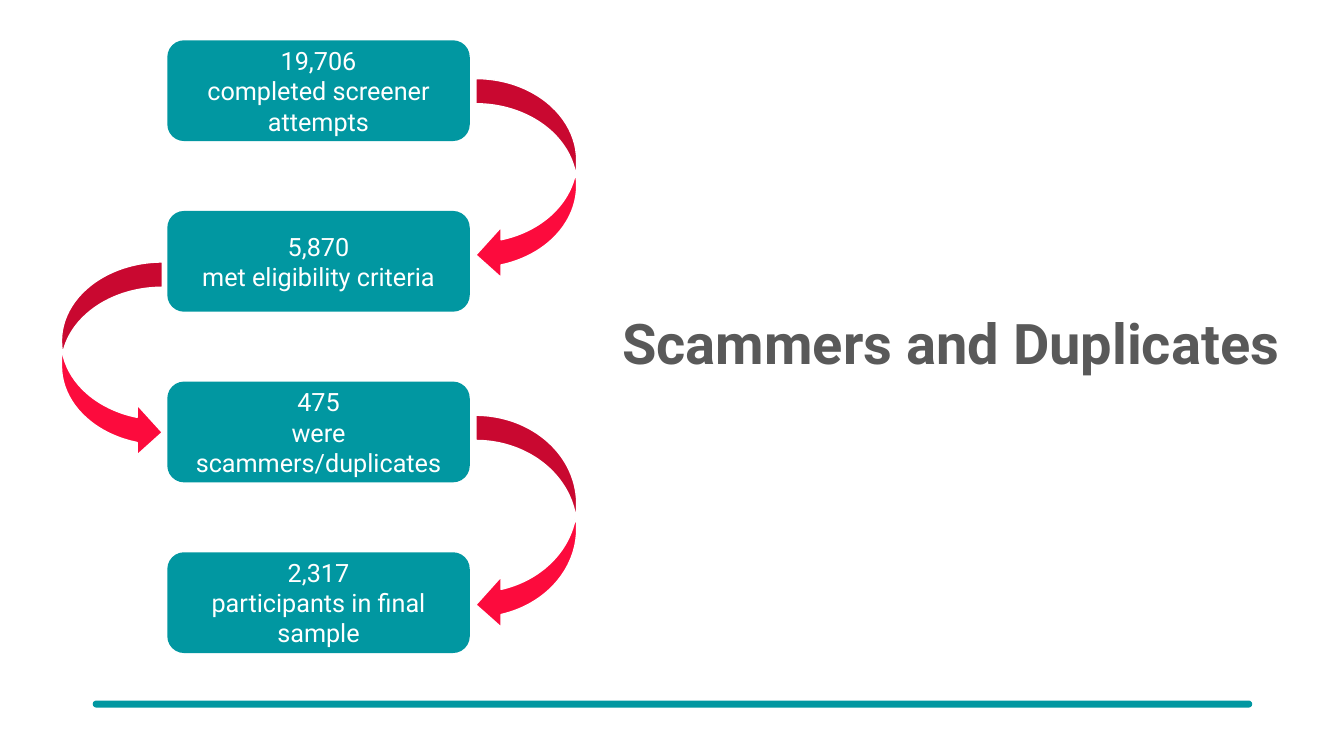
from dataclasses import dataclass

from pptx import Presentation
from pptx.dml.color import RGBColor
from pptx.enum.shapes import MSO_SHAPE
from pptx.enum.text import MSO_ANCHOR, PP_ALIGN
from pptx.util import Inches, Pt

ROUNDED = MSO_SHAPE.ROUNDED_RECTANGLE
ARROW_ON_RIGHT = MSO_SHAPE.CURVED_LEFT_ARROW
ARROW_ON_LEFT = MSO_SHAPE.CURVED_RIGHT_ARROW
MIDDLE = MSO_ANCHOR.MIDDLE
CENTER = PP_ALIGN.CENTER


@dataclass(frozen=True)
class Theme:
    font: str = "Roboto"
    teal: RGBColor = RGBColor(0x01, 0x97, 0xA1)
    red: RGBColor = RGBColor(0xFC, 0x0B, 0x3D)
    grey: RGBColor = RGBColor(0x59, 0x59, 0x59)
    white: RGBColor = RGBColor(0xFF, 0xFF, 0xFF)
    title_size: Pt = Pt(40)
    step_size: Pt = Pt(18)


THEME = Theme()

STEPS = [
    ("19,706", "completed screener attempts"),
    ("5,870", "met eligibility criteria"),
    ("475", "were scammers/duplicates"),
    ("2,317", "participants in final sample"),
]
STEP_TOP, STEP_PITCH = 0.4, 1.693

# Preset, left, top, height
ARROWS = [
    (ARROW_ON_RIGHT, 4.72, 0.78, 2),
    (ARROW_ON_LEFT, 0.61, 2.6, 1.94),
    (ARROW_ON_RIGHT, 4.72, 4.12, 2.13),
]


def add_filled(page, preset, left, top, width, height, color):
    shape = page.shapes.add_shape(
        preset, Inches(left), Inches(top), Inches(width), Inches(height))
    shape.shadow.inherit = False
    shape.fill.solid()
    shape.fill.fore_color.rgb = color
    shape.line.fill.background()
    return shape


def write_lines(box, lines, size, color, bold=False, line_spacing=1.0):
    frame = box.text_frame
    frame.word_wrap = True
    frame.vertical_anchor = MIDDLE
    frame.text = "\n".join(lines)
    for para in frame.paragraphs:
        para.alignment = CENTER
        para.line_spacing = line_spacing
        para.font.name = THEME.font
        para.font.size = size
        para.font.bold = bold
        para.font.color.rgb = color


def add_title(page, text):
    box = page.shapes.add_textbox(
        Inches(6.04), Inches(0.4), Inches(6.78), Inches(6.08))
    write_lines(box, [text], THEME.title_size, THEME.grey,
                bold=True, line_spacing=0.9)


def add_step(page, index, lines):
    top = STEP_TOP + index * STEP_PITCH
    box = add_filled(page, ROUNDED, 1.66, top, 3, 1, THEME.teal)
    write_lines(box, lines, THEME.step_size, THEME.white)


def add_arrow(page, preset, left, top, height):
    arrow = add_filled(page, preset, left, top, 1, height, THEME.red)
    arrow.line.color.rgb = THEME.white
    arrow.line.width = Pt(1)


def add_footer_bar(page):
    bar = add_filled(page, ROUNDED, 0.92, 6.95, 11.5, 0.07, THEME.teal)
    bar.adjustments[0] = 0.5


def main():
    deck = Presentation()
    deck.slide_width, deck.slide_height = Inches(13.33), Inches(7.5)
    page = deck.slides.add_slide(deck.slide_layouts[6])

    # Footer and title
    add_footer_bar(page)
    add_title(page, "Scammers and Duplicates")

    # Screening flow
    for index, lines in enumerate(STEPS):
        add_step(page, index, lines)
    for arrow in ARROWS:
        add_arrow(page, *arrow)

    deck.save("out.pptx")


if __name__ == "__main__":
    main()
